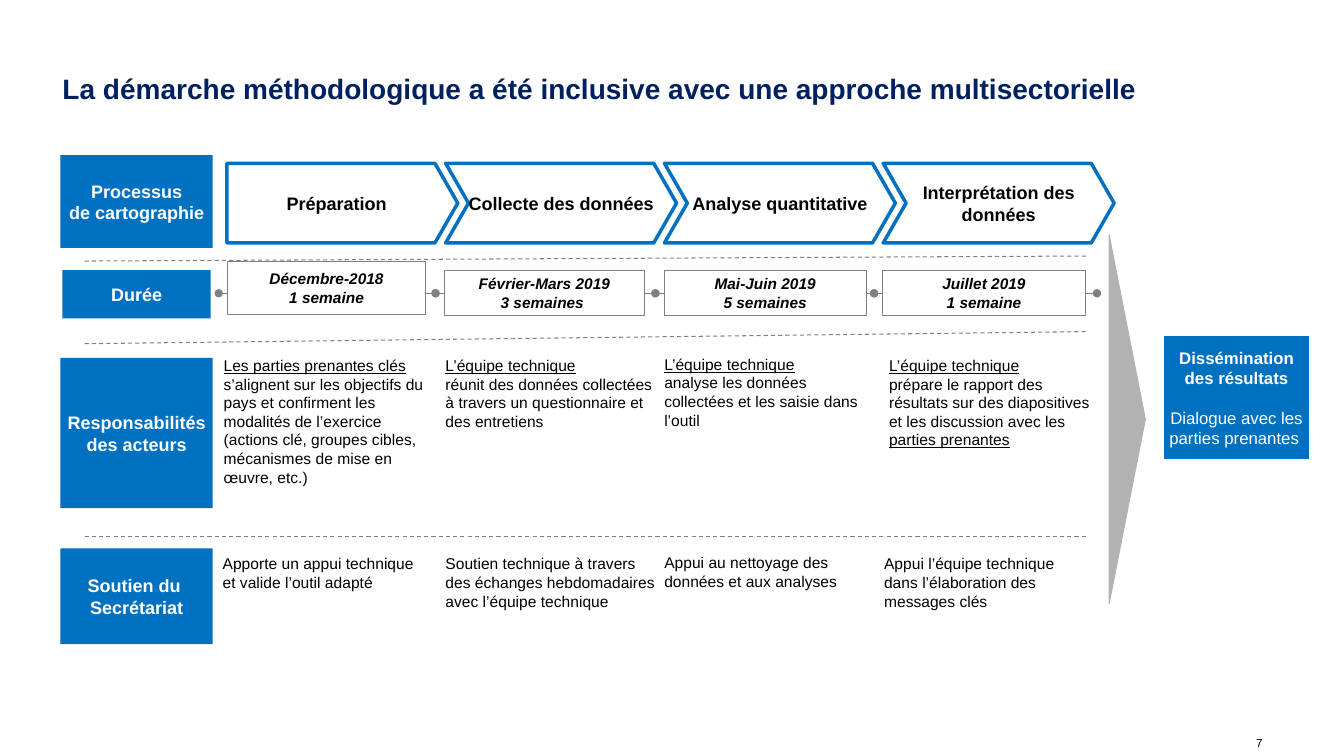
from lxml import etree
from pptx import Presentation
from pptx import util as u
from pptx.dml import color
from pptx.enum import dml, shapes, text
from pptx.oxml import ns

PX = 9144
BLUE, GREY, WHITE, BLACK = "0070C0", "808080", "FFFFFF", "000000"
CENTER, LEFT = text.PP_ALIGN.CENTER, text.PP_ALIGN.LEFT
MIDDLE, TOP = text.MSO_ANCHOR.MIDDLE, text.MSO_ANCHOR.TOP
rgb = color.RGBColor.from_string

deck = Presentation()
deck.slide_width, deck.slide_height = 1333 * PX, 750 * PX
slide = deck.slides.add_slide(deck.slide_layouts[6])


def block(box, lines=(), size=12.9, ink=BLACK, bold=False, kind=None, fill=WHITE,
          edge=None, weight=0.75, align=LEFT, anchor=TOP, insets=(10, 9)):
    place = [v * PX for v in box]
    if kind is None:
        part = slide.shapes.add_textbox(*place)
    else:
        part = slide.shapes.add_shape(kind, *place)
        part.shadow.inherit = False
        part.fill.solid()
        part.fill.fore_color.rgb = rgb(fill)
        if edge:
            part.line.color.rgb = rgb(edge)
            part.line.width = u.Pt(weight)
        else:
            part.line.fill.background()
    frame = part.text_frame
    frame.word_wrap = True
    frame.vertical_anchor = anchor
    frame.margin_left = frame.margin_right = insets[0] * PX
    frame.margin_top = frame.margin_bottom = insets[1] * PX
    for i, runs in enumerate(lines):
        paragraph = frame.paragraphs[0] if i == 0 else frame.add_paragraph()
        paragraph.alignment = align
        for words in [runs] if isinstance(runs, str) else runs:
            run = paragraph.add_run()
            run.text = words
            run.font.name, run.font.size, run.font.bold = "Arial", u.Pt(size), bold
            run.font.color.rgb = rgb(ink)
    return part


def rule(x1, y1, x2, y2, dashed):
    link = slide.shapes.add_connector(
        shapes.MSO_CONNECTOR.STRAIGHT, x1 * PX, y1 * PX, x2 * PX, y2 * PX)
    link.line.color.rgb = rgb(GREY)
    link.line.width = u.Pt(0.75)
    if dashed:
        link.line.dash_style = dml.MSO_LINE.DASH
    else:
        stroke = link.line._get_or_add_ln()
        for end in ("a:headEnd", "a:tailEnd"):
            etree.SubElement(stroke, ns.qn(end), type="oval")
    etree.SubElement(link._element.spPr, ns.qn("a:effectLst"))


RECT = shapes.MSO_SHAPE.RECTANGLE
PENTAGON, CHEVRON = shapes.MSO_SHAPE.PENTAGON, shapes.MSO_SHAPE.CHEVRON

block((62, 18, 1210, 91),
      ["La démarche méthodologique a été inclusive avec une approche multisectorielle"],
      20, "002060", True, anchor=text.MSO_ANCHOR.BOTTOM, insets=(0, 5))
page = block((1246, 730, 26, 14), ["7"], 8.3, insets=(0, 0))
page.text_frame.word_wrap = False

for box, heading in [
    ((60, 154, 151, 92), ["Processus", "de cartographie"]),
    ((62, 268, 147, 48), ["Durée"]),
    ((60, 355, 151, 149), ["Responsabilités des acteurs"]),
    ((60, 544, 151, 95), ["Soutien du ", "Secrétariat"]),
]:
    block(box, heading, ink=WHITE, bold=True, kind=RECT, fill=BLUE,
          align=CENTER, anchor=MIDDLE, insets=(0, 9))

for y1, y2 in [(259, 254), (341, 329), (532, 532)]:
    rule(84, y1, 1078, y2, True)

stages = [
    ("Préparation", PENTAGON, (226, 259, 196, 53), ["Décembre-2018", "1 semaine"],
     (212, 344, 223, 146),
     [["Les parties prenantes clés",
       " s’alignent sur les objectifs du pays et confirment les modalités de l’exercice "
       "(actions clé, groupes cibles, mécanismes de mise en œuvre, etc.)"]],
     (211, 541, 212, 110), "Apporte un appui technique et valide l’outil adapté"),
    ("Collecte des données", CHEVRON, (441, 268, 198, 45), ["Février-Mars 2019", "3 semaines "],
     (432, 344, 229, 146),
     ["L’équipe technique",
      "réunit des données collectées à travers un questionnaire et des entretiens"],
     (432, 541, 230, 95),
     "Soutien technique à travers des échanges hebdomadaires avec l’équipe technique"),
    ("Analyse quantitative", CHEVRON, (659, 268, 200, 45), ["Mai-Juin 2019", "5 semaines"],
     (649, 343, 224, 146),
     ["L’équipe technique", "analyse les données collectées et les saisie dans l’outil"],
     (649, 540, 226, 95), "Appui au nettoyage des données et aux analyses"),
    ("Interprétation des données", CHEVRON, (875, 268, 202, 45), ["Juillet 2019", "1 semaine"],
     (872, 344, 226, 146),
     ["L’équipe technique",
      ["prépare le rapport des résultats sur des diapositives et les discussion avec les ",
       "parties prenantes"]],
     (867, 541, 221, 95), "Appui l’équipe technique dans l’élaboration des messages clés"),
]
milestones = [217, 432, 650, 867, 1088]

for i, (stage, outline, period_box, period, duty_box, duty, aid_box, aid) in enumerate(stages):
    arrow = block((225 + 217 * i, 162, 229, 79), [stage], bold=True, kind=outline, edge=BLUE,
                  weight=2.5, align=CENTER, anchor=MIDDLE, insets=(0, 9))
    arrow.adjustments[0] = 0.287
    rule(milestones[i], 291, milestones[i + 1], 291, False)
    duration = block(period_box, period, 11, bold=True, kind=RECT, edge=GREY,
                     align=CENTER, anchor=MIDDLE, insets=(0, 9))
    for paragraph in duration.text_frame.paragraphs:
        paragraph.runs[0].font.italic = True
    actors = block(duty_box, duty, 11.1, kind=RECT, edge=WHITE)
    for paragraph in actors.text_frame.paragraphs:
        for run in paragraph.runs:
            run.font.underline = "parties prenantes" in run.text or run.text == "L’équipe technique"
    block(aid_box, [aid], 11.1)

outcome = block((1155, 334, 143, 121),
                ["Dissémination des résultats", "Dialogue avec les parties prenantes "],
                12, WHITE, True, RECT, BLUE, BLUE, align=CENTER, anchor=MIDDLE, insets=(0, 9))
dialogue = outcome.text_frame.paragraphs[1]
dialogue.space_before = u.Pt(13.8)
dialogue.runs[0].font.bold = False

funnel = block((935, 398, 366, 36), kind=shapes.MSO_SHAPE.ISOSCELES_TRIANGLE,
               fill="B2B2B2", edge="B2B2B2")
funnel.rotation = 90

deck.save("out.pptx")
